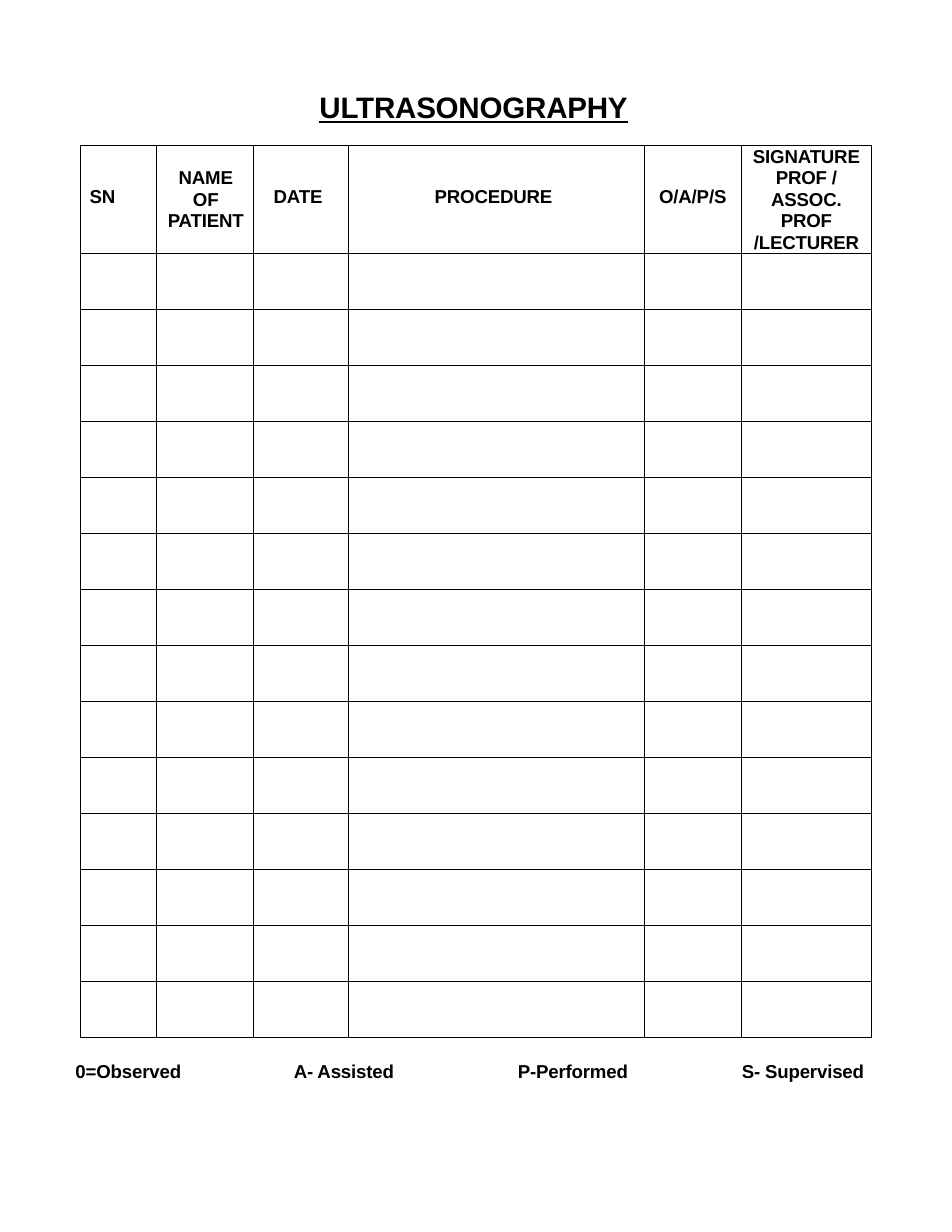
from itertools import product

from lxml import etree
from pptx import Presentation
from pptx.dml.color import RGBColor
from pptx.enum.text import MSO_ANCHOR, PP_ALIGN
from pptx.oxml.ns import qn
from pptx.util import Pt

LEFT, CENTER = PP_ALIGN.LEFT, PP_ALIGN.CENTER
MIDDLE = MSO_ANCHOR.MIDDLE

COLUMN_WIDTHS = [48.9, 62.3, 61.1, 190.3, 62.4, 83.5]
HEADER_HEIGHT, ROW_HEIGHT, ENTRY_ROWS = 69.5, 36, 14
# Heading, alignment, left margin, bottom margin
HEADINGS = [
    ("SN", LEFT, 5.8, 3.5),
    ("NAME\vOF\vPATIENT", CENTER, 1, 0),
    ("DATE", LEFT, 13, 3.5),
    ("PROCEDURE", LEFT, 55.4, 3.5),
    ("O/A/P/S", LEFT, 9.4, 3.5),
    ("SIGNATURE\vPROF /\vASSOC.\vPROF\v/LECTURER", CENTER, 0, 0),
]
# Label, left, width
LEGEND = [
    ("0=Observed", 47.5, 71.3),
    ("A- Assisted", 187.9, 68.4),
    ("P-Performed", 331.9, 74.2),
    ("S- Supervised", 475.9, 82.1),
]


def color(value):
    return RGBColor.from_string(value)


class FormSlide:
    font_name = "Arial"
    ink = "000000"
    border_width = 0.5

    def __init__(self, slide):
        self.slide = slide

    def style(self, paragraph, size, underline=None):
        for run in paragraph.runs:
            font = run.font
            font.name, font.size = self.font_name, Pt(size)
            font.bold, font.underline = True, underline
            font.color.rgb = color(self.ink)
            font._element.set("spc", "-10")

    def label(self, text, left, top, width, height, size, underline=None):
        box = self.slide.shapes.add_textbox(Pt(left), Pt(top), Pt(width), Pt(height))
        frame = box.text_frame
        frame.margin_left = frame.margin_top = Pt(1)
        frame.margin_right = frame.margin_bottom = 0
        frame.word_wrap = False
        frame.text = text
        self.style(frame.paragraphs[0], size, underline)

    def border(self, cell):
        properties = cell._tc.get_or_add_tcPr()
        for position, side in enumerate(("lnL", "lnR", "lnT", "lnB")):
            line = etree.Element(qn(f"a:{side}"), w=str(Pt(self.border_width)))
            fill = etree.SubElement(line, qn("a:solidFill"))
            etree.SubElement(fill, qn("a:srgbClr"), val=self.ink)
            properties.insert(position, line)

    def heading(self, cell, text, alignment, left, bottom):
        cell.margin_left, cell.margin_bottom = Pt(left), Pt(bottom)
        cell.margin_right = cell.margin_top = 0
        cell.vertical_anchor = MIDDLE
        cell.text_frame.text = text
        paragraph = cell.text_frame.paragraphs[0]
        paragraph.alignment = alignment
        paragraph.line_spacing = Pt(13.8)
        self.style(paragraph, 12)

    def log_table(self, left, top):
        heights = [HEADER_HEIGHT] + [ROW_HEIGHT] * ENTRY_ROWS
        table = self.slide.shapes.add_table(
            len(heights), len(COLUMN_WIDTHS), Pt(left), Pt(top),
            Pt(sum(COLUMN_WIDTHS)), Pt(sum(heights))).table
        table.first_row = table.horz_banding = False
        for column, width in zip(table.columns, COLUMN_WIDTHS):
            column.width = Pt(width)
        for row, height in zip(table.rows, heights):
            row.height = Pt(height)
        for row, column in product(range(len(heights)), range(len(COLUMN_WIDTHS))):
            cell = table.cell(row, column)
            cell.fill.background()
            self.border(cell)
        for column, heading in enumerate(HEADINGS):
            self.heading(table.cell(0, column), *heading)


def main():
    presentation = Presentation()
    presentation.slide_width, presentation.slide_height = Pt(612), Pt(792)
    form = FormSlide(presentation.slides.add_slide(presentation.slide_layouts[6]))
    form.label("ULTRASONOGRAPHY", 204.4, 56.4, 203.8, 24.5, 19, underline=True)
    form.log_table(51.8, 93.6)
    for text, left, width in LEGEND:
        form.label(text, left, 680.4, width, 16.5, 12)
    presentation.save("out.pptx")


if __name__ == "__main__":
    main()
